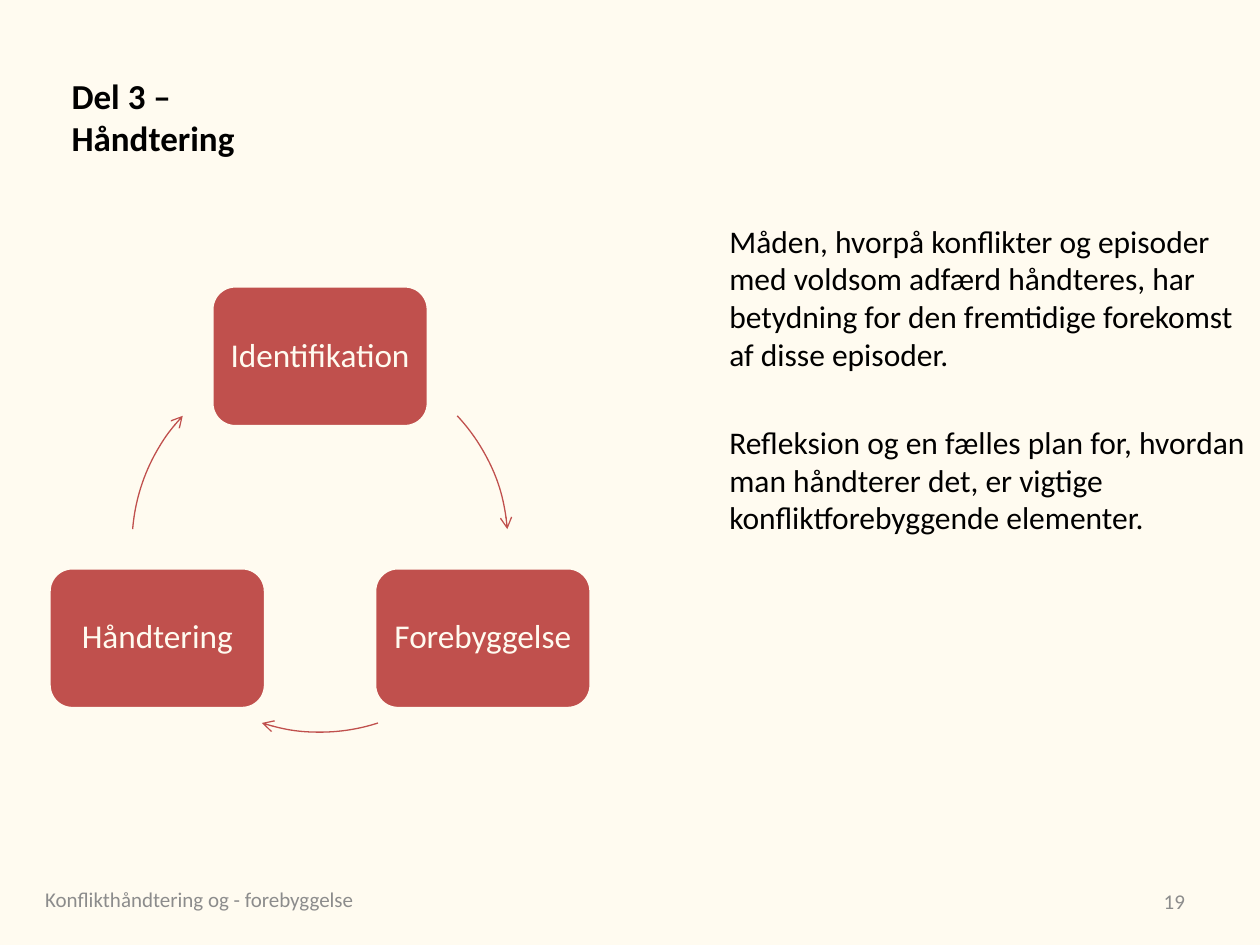
import math

import pptx
import pptx.util
from lxml import etree
from pptx.dml.color import RGBColor
from pptx.enum.shapes import MSO_SHAPE
from pptx.enum.text import MSO_ANCHOR, PP_ALIGN
from pptx.oxml.ns import qn

Pt = pptx.util.Pt

CREAM = RGBColor(0xFF, 0xFB, 0xF0)
RED = RGBColor(0xC0, 0x50, 0x4D)
BLACK = RGBColor(0, 0, 0)
GREY = RGBColor(0x8C, 0x8C, 0x8C)

TITLE = "Del 3 –\nHåndtering"
STEPS = ["Identifikation", "Forebyggelse", "Håndtering"]
ARROW_ANGLES = [(316.9, 355.4), (72, 108), (184.6, 223.1)]
BODY = [
    "Måden, hvorpå konflikter og episoder med voldsom adfærd håndteres, "
    "har betydning for den fremtidige forekomst af disse episoder.",
    "Refleksion og en fælles plan for, hvordan man håndterer det, "
    "er vigtige konfliktforebyggende elementer.",
]
FOOTER = "Konflikthåndtering og - forebyggelse"
PAGE_NUMBER = "19"

CYCLE_X, CYCLE_Y, RADIUS = 182.9, 311, 107.4
STEP_WIDTH, STEP_HEIGHT = 123.8, 80.5


def write(holder, paragraphs, size, color, bold=False, align=PP_ALIGN.LEFT,
          anchor=MSO_ANCHOR.MIDDLE, spacing=1.0, after=0, inset=None):
    frame = holder.text_frame
    frame.word_wrap = True
    frame.vertical_anchor = anchor
    if inset is not None:
        frame.margin_left = frame.margin_right = Pt(inset)
        frame.margin_top = frame.margin_bottom = Pt(inset)
    for index, words in enumerate(paragraphs):
        paragraph = frame.add_paragraph() if index else frame.paragraphs[0]
        paragraph.text = words
        paragraph.alignment = align
        paragraph.line_spacing = spacing
        paragraph.space_after = Pt(after)
        for run in paragraph.runs:
            run.font.name = "Calibri"
            run.font.size = Pt(size)
            run.font.bold = bold
            run.font.color.rgb = color


def text_area(slide, left, top, width, height):
    return slide.shapes.add_textbox(Pt(left), Pt(top), Pt(width), Pt(height))


def add_step(slide, name, angle):
    center_x = CYCLE_X + RADIUS * math.sin(angle)
    center_y = CYCLE_Y - RADIUS * math.cos(angle)
    step = slide.shapes.add_shape(
        MSO_SHAPE.ROUNDED_RECTANGLE,
        Pt(center_x - STEP_WIDTH / 2), Pt(center_y - STEP_HEIGHT / 2),
        Pt(STEP_WIDTH), Pt(STEP_HEIGHT))
    step.shadow.inherit = False
    step.fill.solid()
    step.fill.fore_color.rgb = RED
    step.line.color.rgb = CREAM
    step.line.width = Pt(2)
    write(step, [name], 19, CREAM, align=PP_ALIGN.CENTER, spacing=0.9, inset=5.7)


def add_arrow(slide, start, end):
    arrow = slide.shapes.add_shape(
        MSO_SHAPE.ARC, Pt(CYCLE_X - RADIUS), Pt(CYCLE_Y - RADIUS),
        Pt(2 * RADIUS), Pt(2 * RADIUS))
    for index, degrees in enumerate((start, end)):
        arrow.adjustments[index] = degrees * 60000 / 100000
    arrow.shadow.inherit = False
    arrow.fill.background()
    arrow.line.color.rgb = RED
    arrow.line.width = Pt(0.75)
    outline = arrow.line._get_or_add_ln()
    etree.SubElement(outline, qn("a:tailEnd"), type="arrow")


def main():
    deck = pptx.Presentation()
    deck.slide_width, deck.slide_height = Pt(720), Pt(540)
    slide = deck.slides.add_slide(deck.slide_layouts[6])
    slide.background.fill.solid()
    slide.background.fill.fore_color.rgb = CREAM

    write(text_area(slide, 18.7, 499.7, 228, 28.8), [FOOTER], 12, GREY)
    write(text_area(slide, 33.8, 21.6, 614, 90), [TITLE], 20, BLACK, bold=True)

    for index, (name, angles) in enumerate(zip(STEPS, ARROW_ANGLES)):
        add_step(slide, name, index * math.tau / len(STEPS))
        add_arrow(slide, *angles)

    write(text_area(slide, 409.7, 123.1, 310.3, 362), BODY, 18, BLACK,
          anchor=MSO_ANCHOR.TOP, after=28.6)
    write(text_area(slide, 516.2, 500.4, 168, 28.8), [PAGE_NUMBER], 12, GREY,
          align=PP_ALIGN.RIGHT)
    deck.save("out.pptx")


if __name__ == "__main__":
    main()
